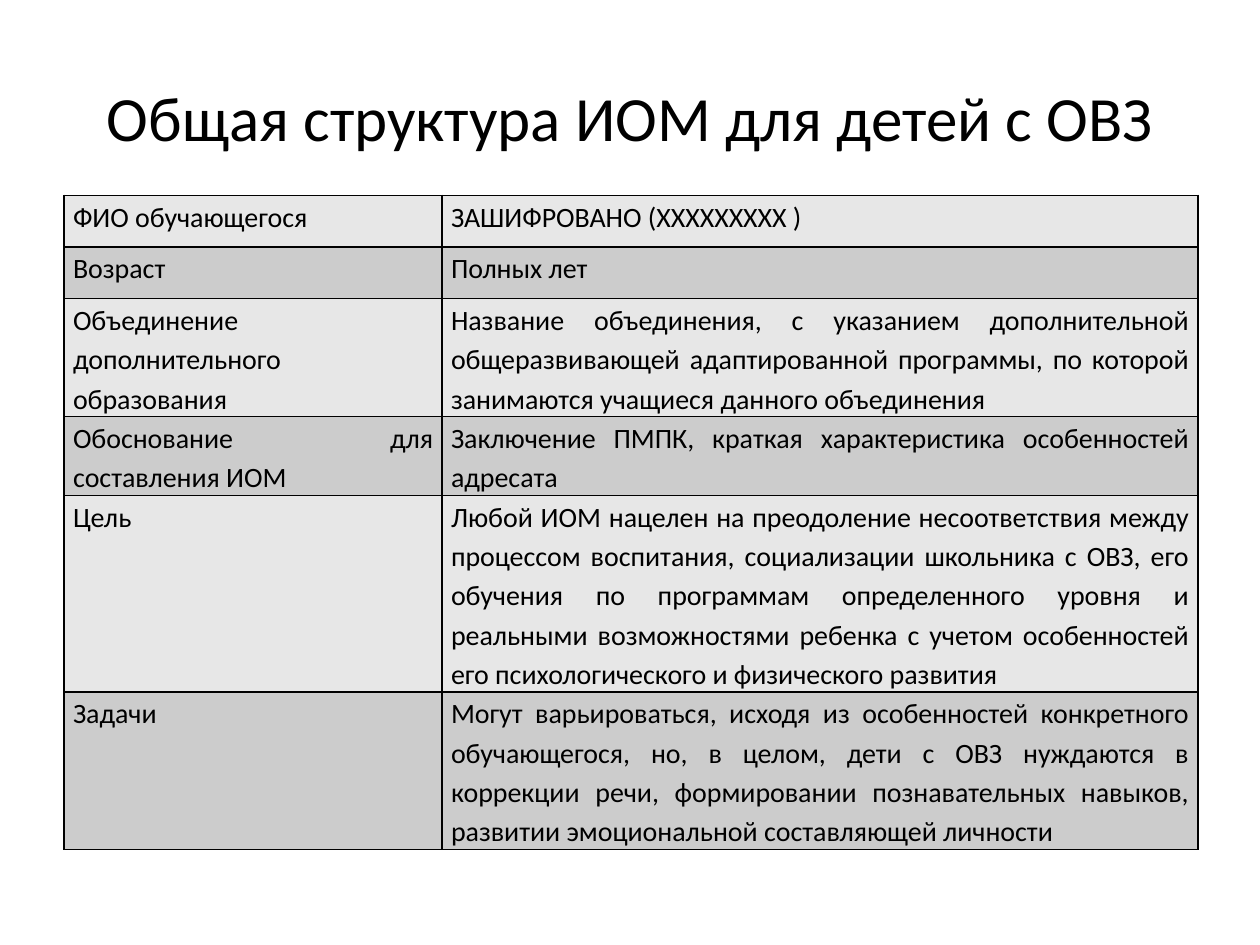
from lxml.etree import SubElement
from pptx import Presentation
from pptx.dml.color import RGBColor
from pptx.enum.text import MSO_ANCHOR, PP_ALIGN
from pptx.oxml.ns import qn
from pptx.util import Inches, Pt

INK = "000000"
BANDS = ["E7E7E7", "CCCCCC"]
ROWS = [
    ("ФИО обучающегося", "ЗАШИФРОВАНО (ХХХХХХХХХ )"),
    ("Возраст", "Полных лет"),
    ("Объединение дополнительного образования",
     "Название объединения, с указанием дополнительной общеразвивающей "
     "адаптированной программы, по которой занимаются учащиеся данного "
     "объединения"),
    ("Обоснование для составления ИОМ",
     "Заключение ПМПК, краткая характеристика особенностей адресата"),
    ("Цель",
     "Любой ИОМ нацелен на преодоление несоответствия между процессом "
     "воспитания, социализации школьника с ОВЗ, его обучения по программам "
     "определенного уровня и реальными возможностями ребенка с учетом "
     "особенностей его психологического и физического развития"),
    ("Задачи",
     "Могут варьироваться, исходя из особенностей конкретного обучающегося, "
     "но, в целом, дети с ОВЗ нуждаются в коррекции речи, формировании "
     "познавательных навыков, развитии эмоциональной составляющей личности"),
]


def style(para, size, align):
    para.alignment = align
    para.font.name = "Calibri"
    para.font.size = Pt(size)
    para.font.color.rgb = RGBColor.from_string(INK)


def frame(cell):
    props = cell._tc.get_or_add_tcPr()
    for side in ("lnL", "lnR", "lnT", "lnB"):
        line = SubElement(props, qn(f"a:{side}"), w=str(Pt(1)))
        fill = SubElement(line, qn("a:solidFill"))
        SubElement(fill, qn("a:srgbClr"), val=INK)


deck = Presentation()
deck.slide_width, deck.slide_height = Inches(10), Inches(7.5)
slide = deck.slides.add_slide(deck.slide_layouts[5])

# Title
title = slide.shapes.title
title.left, title.top = Inches(0.5), Inches(0.3)
title.width, title.height = Inches(9), Inches(1.25)
title.text_frame.text = "Общая структура ИОМ для детей с ОВЗ"
title.text_frame.vertical_anchor = MSO_ANCHOR.MIDDLE
style(title.text_frame.paragraphs[0], 36, PP_ALIGN.CENTER)

# Table: one third for labels, two thirds for content
unit, row = Inches(3), Inches(0.41)
table = slide.shapes.add_table(
    len(ROWS), 2, Inches(0.51), Inches(1.55), 3 * unit, len(ROWS) * row).table
table.columns[0].width, table.columns[1].width = unit, 2 * unit

for r, texts in enumerate(ROWS):
    table.rows[r].height = row
    for c, text in enumerate(texts):
        cell = table.cell(r, c)
        cell.text = text
        cell.margin_left = cell.margin_right = Inches(0.07)
        cell.margin_top = cell.margin_bottom = 0
        para = cell.text_frame.paragraphs[0]
        para.line_spacing = 1.15
        style(para, 16, PP_ALIGN.JUSTIFY)
        para.font.bold = False
        frame(cell)
        cell.fill.solid()
        cell.fill.fore_color.rgb = RGBColor.from_string(BANDS[r % 2])

deck.save("out.pptx")
